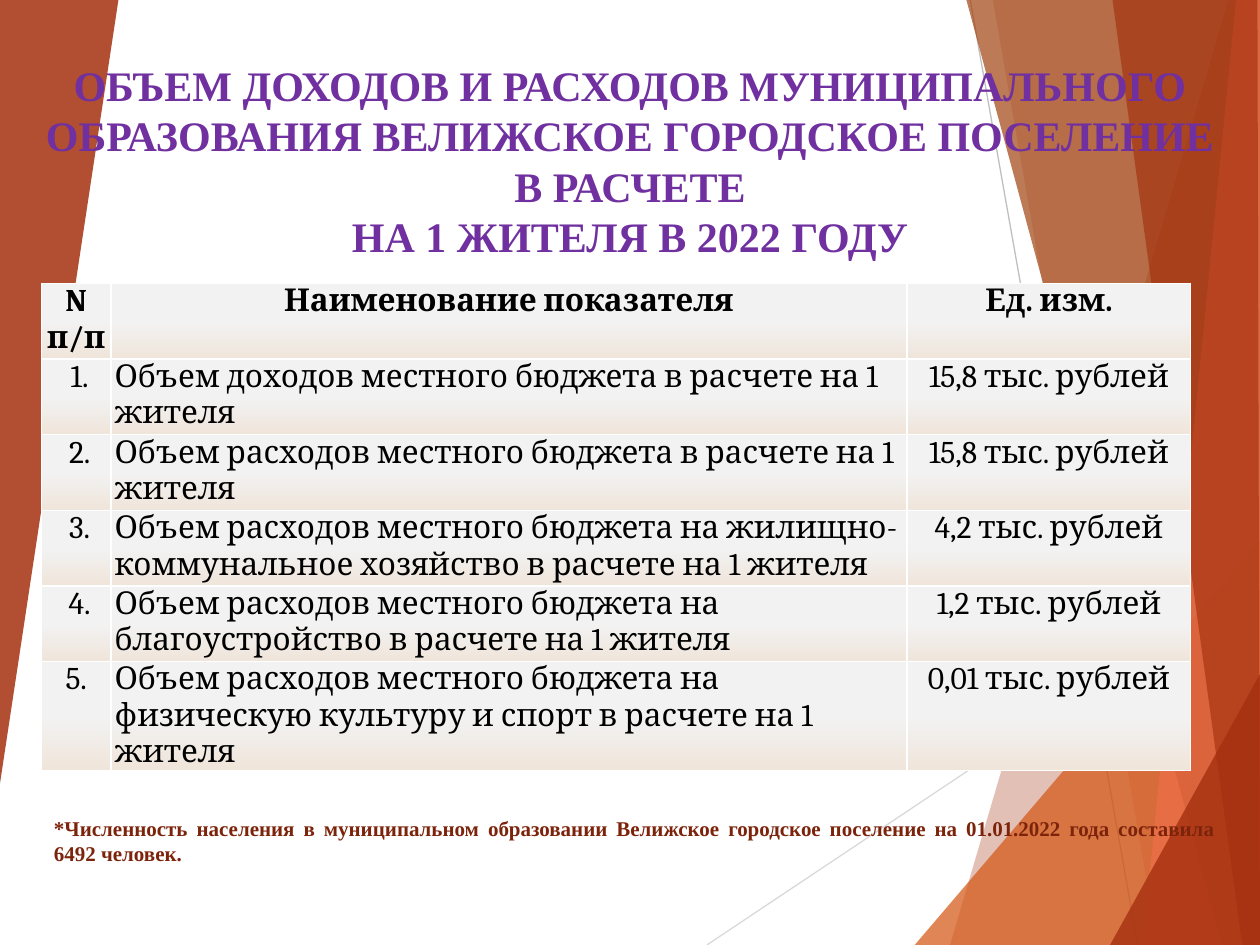
from dataclasses import dataclass

from lxml import etree
from pptx import Presentation
from pptx import util as u
from pptx.dml.color import RGBColor
from pptx.enum import shapes, text
from pptx.oxml import ns

Inches = u.Inches


@dataclass(frozen=True)
class Theme:
    head: str = "7030A0"
    note: str = "7C240B"
    ink: str = "000000"
    rule: str = "FFFFFF"
    glow: str = "F0E5DA"
    cell: str = "F2F2F2"
    rust: str = "A5300F"
    amber: str = "D55816"
    brown: str = "A04210"
    coral: str = "EE6E4A"
    pale: str = "D9D9D9"
    grey: str = "BFBFBF"
    serif: str = "Times New Roman"
    book: str = "Cambria"
    big: int = 24
    mid: int = 18
    small: int = 12


T = Theme()
MID, LEFT, FULL = (text.PP_ALIGN.CENTER, text.PP_ALIGN.LEFT,
                   text.PP_ALIGN.JUSTIFY)

RAYS = [((5.61, 7.5), (10, 4.57), T.pale), ((7.7, 0), (9.03, 7.5), T.grey)]
SHARDS = [
    ([(9.75, 0), (7.54, 7.5), (10, 7.5), (10, 0)], T.rust, 30),
    ([(7.88, 0), (9.19, 7.5), (10, 7.5), (10, 0)], T.rust, 20),
    ([(7.26, 7.5), (10, 4.29), (10, 7.5)], T.amber, 72),
    ([(7.67, 0), (9.7, 7.5), (10, 7.5), (10, 0)], T.brown, 70),
    ([(9.81, 0), (9.07, 7.5), (10, 7.5), (10, 0)], T.coral, 70),
    ([(8.83, 0), (9.86, 7.5), (10, 7.5), (9.98, 0)], T.rust, 65),
    ([(8.81, 7.5), (10, 5.35), (10, 7.5)], T.rust, 80),
    ([(0, 0), (0.94, 0), (0, 6.22)], T.rust, 85),
]
TITLE = [
    "ОБЪЕМ ДОХОДОВ И РАСХОДОВ МУНИЦИПАЛЬНОГО ОБРАЗОВАНИЯ ВЕЛИЖСКОЕ "
    "ГОРОДСКОЕ ПОСЕЛЕНИЕ В РАСЧЕТЕ",
    "НА 1 ЖИТЕЛЯ В 2022 ГОДУ",
]
NOTE = ["*Численность населения в муниципальном образовании Велижское "
        "городское поселение на 01.01.2022 года составила 6492 человек."]
ROWS = [
    ("N п/п", "Наименование показателя", "Ед. изм."),
    (" 1.", "Объем доходов местного бюджета в расчете на 1 жителя",
     "15,8 тыс. рублей"),
    (" 2.", "Объем расходов местного бюджета в расчете на 1 жителя",
     "15,8 тыс. рублей"),
    (" 3.", "Объем расходов местного бюджета на жилищно-коммунальное "
     "хозяйство в расчете на 1 жителя", "4,2 тыс. рублей"),
    (" 4.", "Объем расходов местного бюджета на благоустройство "
     "в расчете на 1 жителя", "1,2 тыс. рублей"),
    ("5.", "Объем расходов местного бюджета на физическую культуру и спорт "
     "в расчете на 1 жителя", "0,01 тыс. рублей"),
]
COLS = [0.55, 6.32, 2.25]


def rgb(code):
    return RGBColor.from_string(code)


def assign(item, form):
    for key, value in form.items():
        setattr(item, key, value)


def add_node(parent, tag, **attrs):
    return etree.SubElement(parent, ns.qn(tag), attrs)


def write(frame, lines, align, font, size, color, bold=True):
    for i, line in enumerate(lines):
        para = frame.paragraphs[0] if i == 0 else frame.add_paragraph()
        para.alignment = align
        run = para.add_run()
        run.text = line
        assign(run.font, {"name": font, "size": u.Pt(size), "bold": bold})
        run.font.color.rgb = rgb(color)


def draw_back(slide, box):
    left, top = box[:2]

    def spot(point):
        return Inches(left + point[0]), Inches(top + point[1])

    for start, end, color in RAYS:
        ray = slide.shapes.add_connector(
            shapes.MSO_CONNECTOR.STRAIGHT, *spot(start), *spot(end))
        ray.line.color.rgb = rgb(color)
        ray.line.width = u.Pt(0.75)
        add_node(ray._element.spPr, "a:effectLst")
    for points, color, alpha in SHARDS:
        pen = slide.shapes.build_freeform(*spot(points[0]))
        pen.add_line_segments([spot(p) for p in points[1:]], close=True)
        shard = pen.convert_to_shape()
        shard.shadow.inherit = False
        shard.fill.solid()
        shard.fill.fore_color.rgb = rgb(color)
        shard.line.fill.background()
        tint = shard._element.spPr.find(".//" + ns.qn("a:srgbClr"))
        add_node(tint, "a:alpha", val=str(alpha * 1000))


def fill_cell(cell):
    assign(cell, {"margin_left": Inches(0.03), "margin_right": Inches(0.03),
                  "margin_top": 0, "margin_bottom": 0})
    props = cell._tc.get_or_add_tcPr()
    for side in ("L", "R", "T", "B"):
        edge = add_node(props, "a:ln" + side, w=str(u.Pt(1)))
        paint = add_node(edge, "a:solidFill")
        add_node(paint, "a:srgbClr", val=T.rule)
    cell.fill.gradient()
    cell.fill.gradient_angle = 90
    looks = [(0, T.glow), (0.5, T.cell)]
    for stop, (place, color) in zip(cell.fill.gradient_stops, looks):
        stop.position = place
        stop.color.rgb = rgb(color)


def draw_table(slide, box):
    grid = slide.shapes.add_table(
        len(ROWS), len(COLS), *map(Inches, box)).table
    for col, width in zip(grid.columns, COLS):
        col.width = Inches(width)
    for r, row in enumerate(ROWS):
        for c, words in enumerate(row):
            cell = grid.cell(r, c)
            fill_cell(cell)
            align = LEFT if r and c == 1 else MID
            write(cell.text_frame, [words], align, T.book, T.mid, T.ink,
                  r == 0)


def place_text(shape, box, lines, align, size, color):
    sides = ("left", "top", "width", "height")
    assign(shape, dict(zip(sides, map(Inches, box))))
    assign(shape.text_frame, {
        "word_wrap": True, "vertical_anchor": text.MSO_ANCHOR.TOP,
        "auto_size": text.MSO_AUTO_SIZE.SHAPE_TO_FIT_TEXT})
    write(shape.text_frame, lines, align, T.serif, size, color)


def draw_title(slide, box):
    title = slide.shapes.title
    slide.shapes._spTree.append(title._element)
    place_text(title, box, TITLE, MID, T.big, T.head)


def draw_note(slide, box):
    note = slide.shapes.add_textbox(*map(Inches, box))
    place_text(note, box, NOTE, FULL, T.small, T.note)


def main():
    deck = Presentation()
    assign(deck, {"slide_width": Inches(10), "slide_height": Inches(7.5)})
    slide = deck.slides.add_slide(deck.slide_layouts[5])
    draw_back(slide, (0, 0, 10, 7.5))
    draw_table(slide, (0.33, 2.25, sum(COLS), 3.6))
    draw_title(slide, (0.25, 0.42, 9.5, 1.72))
    draw_note(slide, (0.33, 6.42, 9.42, 0.5))
    deck.save("out.pptx")


if __name__ == "__main__":
    main()
